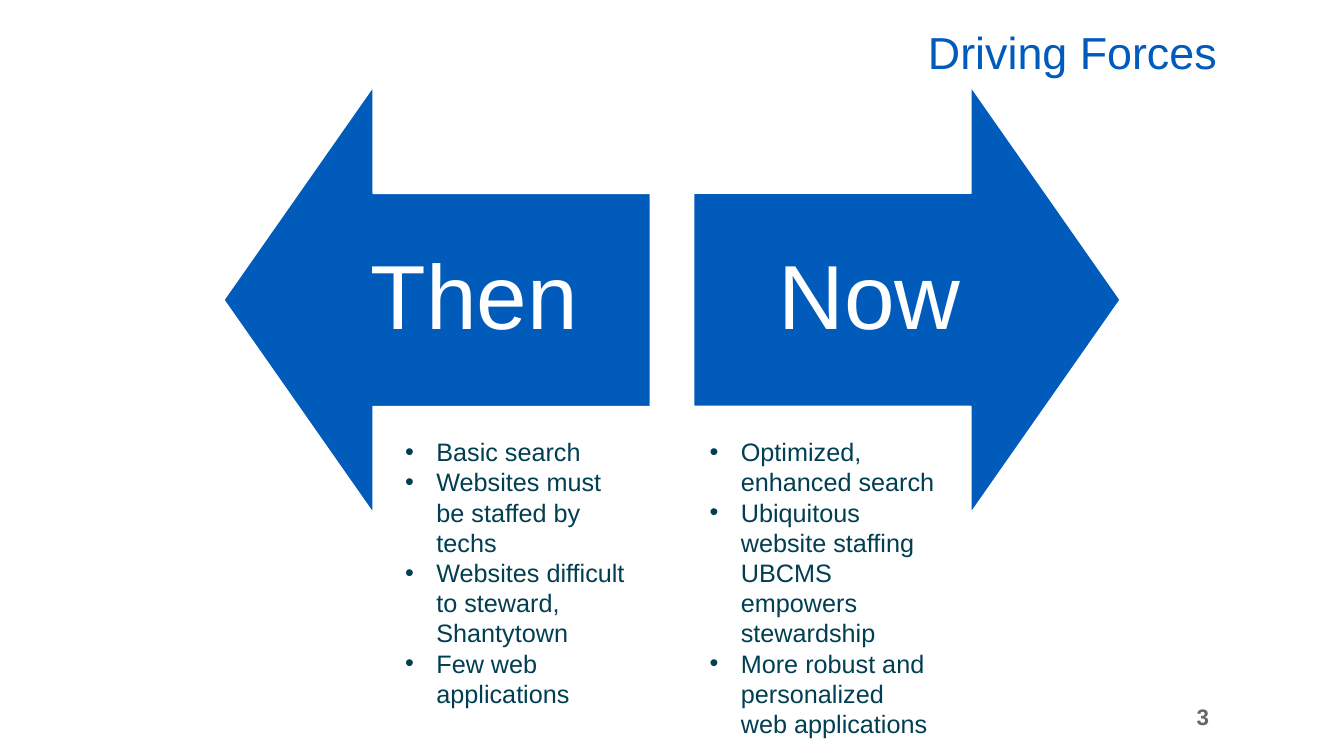
from pptx import Presentation
from pptx.dml.color import RGBColor
from pptx.enum.shapes import MSO_SHAPE
from pptx.enum.text import MSO_ANCHOR, PP_ALIGN
from pptx.oxml.ns import qn
from pptx.util import Inches, Pt
from lxml.etree import SubElement

BLUE = RGBColor(0x00, 0x5B, 0xBB)
TEAL = RGBColor(0x00, 0x3E, 0x51)
GRAY = RGBColor(0x66, 0x66, 0x66)
WHITE = RGBColor(0xFF, 0xFF, 0xFF)


class SlideBuilder:
    font = "Arial"

    def __init__(self, slide):
        self.slide = slide

    def box(self, left, top, width, height, anchor=MSO_ANCHOR.TOP, inset=None):
        sp = self.slide.shapes.add_textbox(
            Inches(left), Inches(top), Inches(width), Inches(height))
        tf = sp.text_frame
        tf.word_wrap = True
        tf.vertical_anchor = anchor
        if inset is not None:
            tf.margin_left = tf.margin_right = Inches(inset)
            tf.margin_top = tf.margin_bottom = Inches(inset)
        return tf

    def run(self, p, text, size, color, bold=False):
        r = p.add_run()
        r.text = text
        r.font.name = self.font
        r.font.size = Pt(size)
        r.font.color.rgb = color
        r.font.bold = bold

    def label(self, area, text, size, color, align, anchor=MSO_ANCHOR.MIDDLE,
              inset=None, spacing=0.9, bold=False):
        p = self.box(*area, anchor, inset).paragraphs[0]
        p.alignment = align
        p.line_spacing = spacing
        self.run(p, text, size, color, bold)

    def arrow(self, left, top, side, rotation):
        sp = self.slide.shapes.add_shape(
            MSO_SHAPE.UP_ARROW, Inches(left), Inches(top), Inches(side), Inches(side))
        sp.rotation = rotation
        sp.adjustments[0] = 0.5
        sp.adjustments[1] = 0.35
        sp.shadow.inherit = False
        sp.fill.solid()
        sp.fill.fore_color.rgb = BLUE
        sp.line.color.rgb = WHITE
        sp.line.width = Pt(1)

    def bullets(self, area, items):
        tf = self.box(*area)
        for i, item in enumerate(items):
            p = tf.add_paragraph() if i else tf.paragraphs[0]
            pPr = p._p.get_or_add_pPr()
            pPr.set("marL", str(Inches(0.31)))
            pPr.set("indent", str(-Inches(0.31)))
            SubElement(pPr, qn("a:buFont")).set("typeface", self.font)
            SubElement(pPr, qn("a:buChar")).set("char", "•")
            for j, line in enumerate(item.split("\n")):
                if j:
                    p.add_line_break()
                self.run(p, line, 18, TEAL)


def main():
    prs = Presentation()
    prs.slide_width = Inches(13.33)
    prs.slide_height = Inches(7.5)
    s = SlideBuilder(prs.slides.add_slide(prs.slide_layouts[6]))

    s.label((7.59, 6.91, 4.5, 0.4), "3", 16, GRAY, PP_ALIGN.RIGHT,
            spacing=1.0, bold=True)
    s.label((0.67, 0.24, 11.5, 0.59), "Driving Forces", 32, BLUE,
            PP_ALIGN.RIGHT, MSO_ANCHOR.BOTTOM)

    sides = [
        ("Then", 2.22, 270, 2.96, (3.92, 4.28, 2.48, 2.83), [
            "Basic search",
            "Websites must be staffed by techs",
            "Websites difficult to steward, Shantytown",
            "Few web applications"]),
        ("Now", 6.88, 90, 6.88, (6.94, 4.28, 2.48, 3.13), [
            "Optimized, enhanced search",
            "Ubiquitous website staffing UBCMS empowers stewardship",
            "More robust and personalized\nweb applications"]),
    ]
    for name, arrow_left, rotation, label_left, area, items in sides:
        s.arrow(arrow_left, 0.86, 4.23, rotation)
        s.label((label_left, 1.92, 3.49, 2.12), name, 65, WHITE,
                PP_ALIGN.CENTER, inset=0.51)
        s.bullets(area, items)

    prs.save("out.pptx")


if __name__ == "__main__":
    main()
